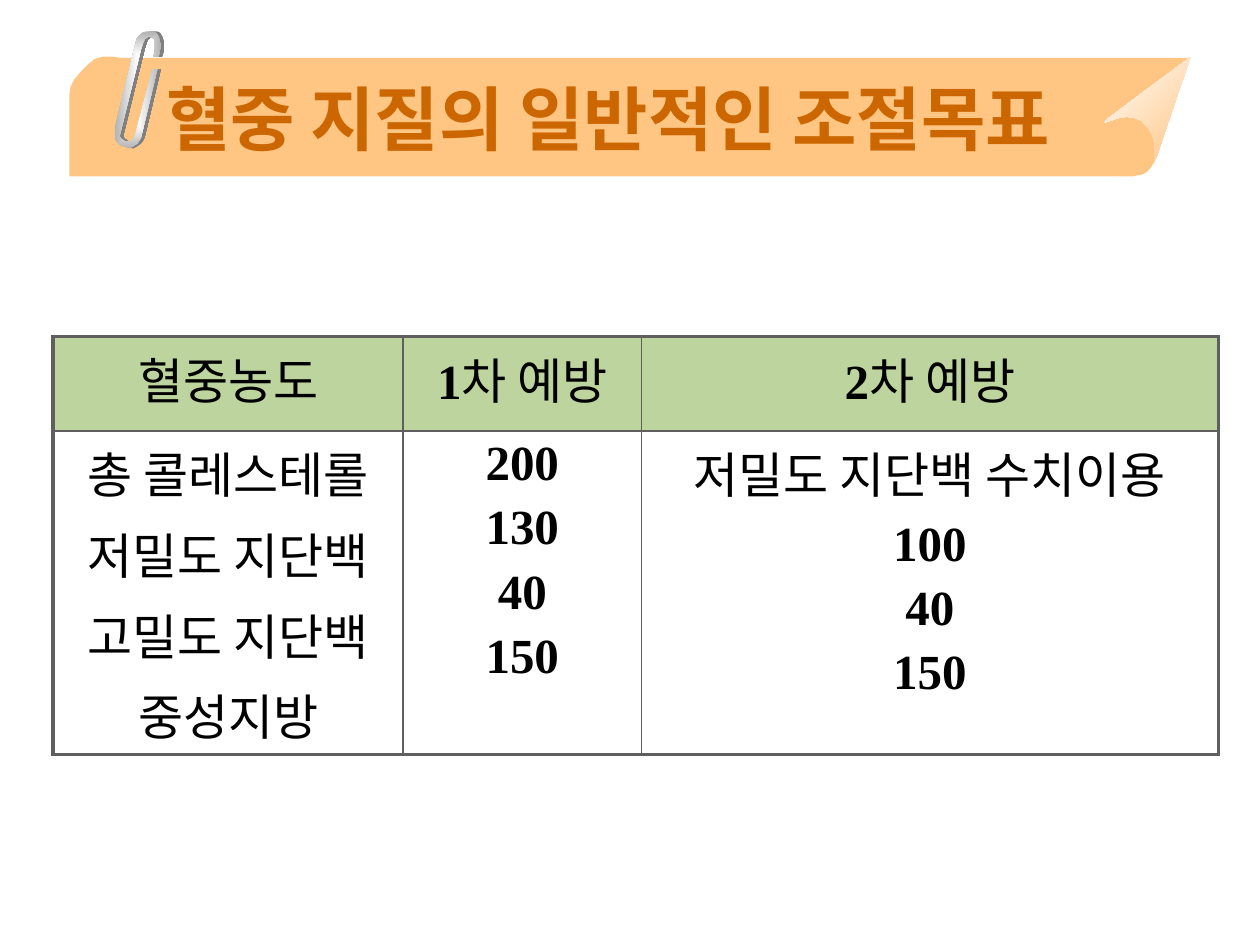
import pptx
import pptx.dml.color
import pptx.enum.dml
import pptx.enum.text
import pptx.oxml
import pptx.oxml.ns
import pptx.util
from lxml import etree

PX = 9144
KOR = "Noto Sans CJK KR"
ROM = "Times New Roman"
BAND = [(0, 95), (817, 95), (844, 95), [(851, 93), (855, 96), (863, 80)],
        (889, 1), (42, 1), (34, 0), (26, 0), (20, 2), (15, 6), (10, 11),
        (4, 18), (1, 24), (0, 31)]
FOLD = [(74, 0), (47, 79), [(41, 88), (52, 69), (38, 54)],
        [(24, 38), (0, 59), (7, 50)]]
CLIP = [(30, 30), (34, 30), (21, 84), (20, 86), (18, 89), (15, 91), (12, 93),
        (7, 91), (4, 90), (3, 89), (0, 85), (0, 83), (0, 77), (17, 8),
        (18, 5), (20, 3), (22, 1), (25, 0), (31, 0), (33, 1), (35, 4),
        (36, 7), (37, 10), (37, 13), (35, 20), (31, 20), (32, 14), (32, 11),
        (32, 9), (32, 6), (30, 5), (27, 4), (24, 6), (23, 8), (22, 11),
        (21, 14), (5, 79), (4, 83), (5, 85), (8, 87), (10, 87), (14, 87),
        (16, 83), (17, 80)]
ROWS = [
    [["혈중농도"], [("1", "차 예방")], [("2", "차 예방")]],
    [["총 콜레스테롤", "저밀도 지단백", "고밀도 지단백", "중성지방"],
     ["200", "130", "40", "150"],
     ["저밀도 지단백 수치이용", "100", "40", "150"]],
]


def px(num):
    return pptx.util.Emu(round(num * PX))


def rgb(code):
    return pptx.dml.color.RGBColor.from_string(code)


def add(node, tag, **attrs):
    return etree.SubElement(node, pptx.oxml.ns.qn(tag), attrs)


def style(run, face, size, color, bold):
    font = run.font
    for key, val in {"name": face, "size": pptx.util.Pt(size), "bold": bold}.items():
        setattr(font, key, val)
    font.color.rgb = rgb(color)
    add(run._r.get_or_add_rPr(), "a:ea", typeface=face)


def trace(steps):
    dots = []
    for step in steps:
        if isinstance(step, tuple):
            dots.append(step)
            continue
        curve = [dots[-1]] + step
        for i in range(1, 13):
            t = i / 12
            mix = ((1 - t) ** 3, 3 * t * (1 - t) ** 2, 3 * t * t * (1 - t), t ** 3)
            dots.append(tuple(sum(m * p[k] for m, p in zip(mix, curve)) for k in (0, 1)))
    return dots


def outline(slide, left, top, steps):
    dots = [(px(x), px(y)) for x, y in trace(steps)]
    pen = slide.shapes.build_freeform(*dots[0], scale=1.0)
    pen.add_line_segments(dots[1:], close=True)
    shape = pen.convert_to_shape(px(left), px(top))
    shape.line.fill.background()
    shape.shadow.inherit = False
    return shape


def blend(shape, first, last):
    shape.fill.gradient()
    for stop, code in zip(shape.fill.gradient_stops, (first, last)):
        stop.color.rgb = rgb(code)
    shape.fill.gradient_angle = 315


def clip(slide, left, top):
    shape = outline(slide, left, top, CLIP)
    blend(shape, "FDFDFD", "B2B2B2")
    grad = shape._element.spPr.find(pptx.oxml.ns.qn("a:gradFill"))
    grad.remove(grad.find(pptx.oxml.ns.qn("a:lin")))
    rect = add(grad, "a:path", path="rect")
    add(rect, "a:fillToRect", l="50000", t="50000", r="50000", b="50000")
    glow = shape._element.spPr.find(pptx.oxml.ns.qn("a:effectLst"))
    shade = add(glow, "a:outerShdw", dist="25400", dir="0", rotWithShape="0")
    add(shade, "a:srgbClr", val="808080")


def banner(slide, left, top):
    band = outline(slide, left, top + 20, BAND)
    band.fill.solid()
    band.fill.fore_color.rgb = rgb("FFC583")
    blend(outline(slide, left + 816, top + 20, FOLD), "FFFFFF", "FFC583")
    clip(slide, left + 36, top)
    box = slide.shapes.add_textbox(px(left + 67), px(top + 6), px(823), px(125))
    frame = box.text_frame
    frame.word_wrap = True
    frame.vertical_anchor = pptx.enum.text.MSO_ANCHOR.MIDDLE
    run = frame.paragraphs[0].add_run()
    run.text = "혈중 지질의 일반적인 조절목표"
    style(run, KOR, 40, "CC6600", True)


def edge(cell, row, col):
    props = cell._tc.get_or_add_tcPr()
    outer = {"L": col == 0, "R": col == 2, "T": row == 0, "B": row == 1}
    for i, (side, thick) in enumerate(outer.items()):
        line = pptx.oxml.parse_xml(
            f'<a:ln{side} {pptx.oxml.ns.nsdecls("a")} w="{28575 if thick else 12700}">'
            f'<a:solidFill><a:srgbClr val="5F5F5F"/></a:solidFill></a:ln{side}>')
        props.insert(i, line)


def write(cell, lines):
    frame = cell.text_frame
    for i, line in enumerate(lines):
        para = frame.add_paragraph() if i else frame.paragraphs[0]
        para.alignment = pptx.enum.text.PP_ALIGN.CENTER
        if i:
            gap = add(para._p.get_or_add_pPr(), "a:spcBef")
            add(gap, "a:spcPct", val="20000")
        for part in [line] if isinstance(line, str) else line:
            run = para.add_run()
            run.text = part
            digit = part.isdigit()
            style(run, ROM if digit else KOR, 28, "000000", digit)


def goals(slide, left, top, cols, rows):
    table = slide.shapes.add_table(len(rows), len(cols), px(left), px(top),
                                   px(sum(cols)), px(sum(rows))).table
    for key in ("first_row", "horz_banding"):
        setattr(table, key, False)
    for col, wide in zip(table.columns, cols):
        col.width = px(wide)
    for r, high in enumerate(rows):
        table.rows[r].height = px(high)
        for c, lines in enumerate(ROWS[r]):
            cell = table.cell(r, c)
            if r == 0:
                cell.fill.solid()
                cell.fill.fore_color.rgb = rgb("BDD49E")
            else:
                cell.fill.background()
            edge(cell, r, c)
            write(cell, lines)


def main():
    deck = pptx.Presentation()
    deck.slide_width, deck.slide_height = px(1000), px(750)
    slide = deck.slides.add_slide(deck.slide_layouts[6])
    banner(slide, 55, 25)
    goals(slide, 42, 267, [278, 189, 458], [75, 257])
    deck.save("out.pptx")


if __name__ == "__main__":
    main()
